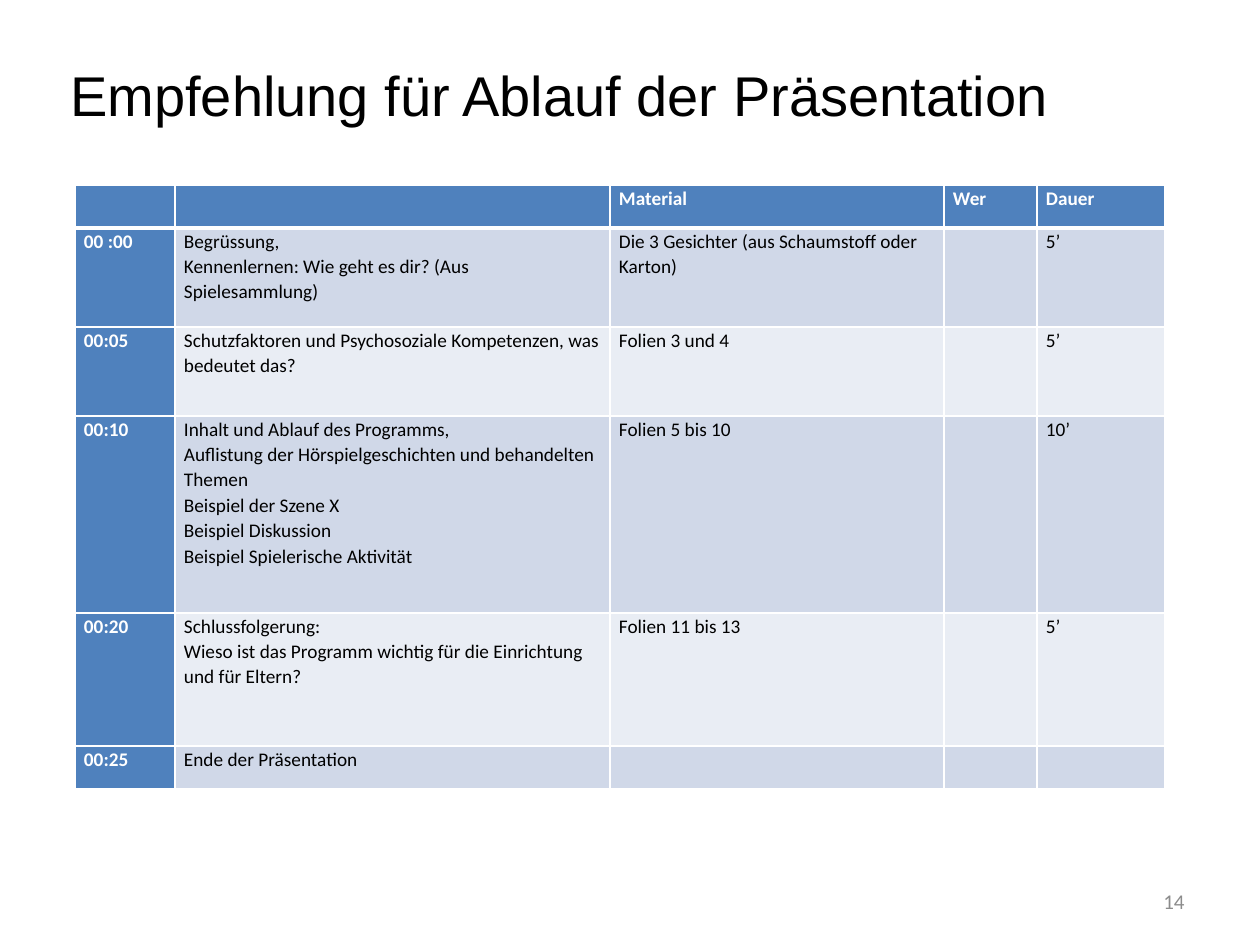
import pptx
import pptx.util
import pptx.dml.color
import pptx.enum.text
import lxml.etree

RGB = pptx.dml.color.RGBColor
BLACK = RGB(0, 0, 0)
WHITE = RGB(255, 255, 255)
GREY = RGB(0x8C, 0x8C, 0x8C)
BLUE = RGB(0x4F, 0x81, 0xBD)
BANDS = [RGB(0xE9, 0xED, 0xF4), RGB(0xD0, 0xD8, 0xE8)]
NS = "http://schemas.openxmlformats.org/drawingml/2006/main"
Pt = pptx.util.Pt
ALIGN = pptx.enum.text.PP_ALIGN
ANCHOR = pptx.enum.text.MSO_ANCHOR


def px(n):
    return round(n * 914400 / 126)


def write(para, text, size, font, color, bold=False):
    run = para.add_run()
    run.text = text
    run.font.size = Pt(size)
    run.font.name = font
    run.font.color.rgb = color
    run.font.bold = bold


deck = pptx.Presentation()
deck.slide_width = px(1260)
deck.slide_height = px(945)
slide = deck.slides.add_slide(deck.slide_layouts[6])

labels = [
    ("Empfehlung für Ablauf der Präsentation", (58, 55, 1145, 158), 32, "Arial", BLACK, ALIGN.LEFT, ANCHOR.TOP),
    ("14", (903, 876, 294, 50), 12, "Calibri", GREY, ALIGN.RIGHT, ANCHOR.MIDDLE),
]
for text, spot, size, font, color, align, anchor in labels:
    frame = slide.shapes.add_textbox(*map(px, spot)).text_frame
    frame.word_wrap = True
    frame.vertical_anchor = anchor
    para = frame.paragraphs[0]
    para.alignment = align
    if size == 32:
        para.line_spacing = Pt(38)
    write(para, text, size, font, color)

rows = [
    ["", "", "Material", "Wer", "Dauer"],
    ["00 :00", "Begrüssung,\nKennenlernen: Wie geht es dir? (Aus Spielesammlung)",
     "Die 3 Gesichter (aus Schaumstoff oder Karton)", "", "5’"],
    ["00:05", "Schutzfaktoren und Psychosoziale Kompetenzen, was bedeutet das?",
     "Folien 3 und 4", "", "5’"],
    ["00:10", "Inhalt und Ablauf des Programms,\n"
     "Auflistung der Hörspielgeschichten und behandelten Themen\n"
     "Beispiel der Szene X\nBeispiel Diskussion\nBeispiel Spielerische Aktivität",
     "Folien 5 bis 10", "", "10’"],
    ["00:20", "Schlussfolgerung:\nWieso ist das Programm wichtig für die Einrichtung und für Eltern?",
     "Folien 11 bis 13", "", "5’"],
    ["00:25", "Ende der Präsentation", "", "", ""],
]
widths = [100, 435, 334, 93, 128]
heights = [43, 99, 89, 197, 133, 43]
table = slide.shapes.add_table(
    len(rows), len(widths), px(75), px(185), px(sum(widths)), px(sum(heights))
).table
for col, width in zip(table.columns, widths):
    col.width = px(width)
for row, height in zip(table.rows, heights):
    row.height = px(height)

for r, row in enumerate(rows):
    for c, text in enumerate(row):
        cell = table.cell(r, c)
        head = r == 0 or c == 0
        cell.margin_left = cell.margin_right = px(9)
        cell.margin_top = cell.margin_bottom = 0
        cell.fill.solid()
        cell.fill.fore_color.rgb = BLUE if head else BANDS[r % 2]
        for n, line in enumerate(text.split("\n") if text else []):
            frame = cell.text_frame
            para = frame.add_paragraph() if n else frame.paragraphs[0]
            para.line_spacing = 1.07
            write(para, line, 11, "Calibri", WHITE if head else BLACK, head)
        props = cell._tc.get_or_add_tcPr()
        for n, side in enumerate(["lnL", "lnR", "lnT", "lnB"]):
            thick = (r, side) in [(0, "lnB"), (1, "lnT")]
            edge = lxml.etree.Element(f"{{{NS}}}{side}", w=str(Pt(3 if thick else 1)))
            fill = lxml.etree.SubElement(edge, f"{{{NS}}}solidFill")
            lxml.etree.SubElement(fill, f"{{{NS}}}srgbClr", val=str(WHITE))
            props.insert(n, edge)

deck.save("out.pptx")
